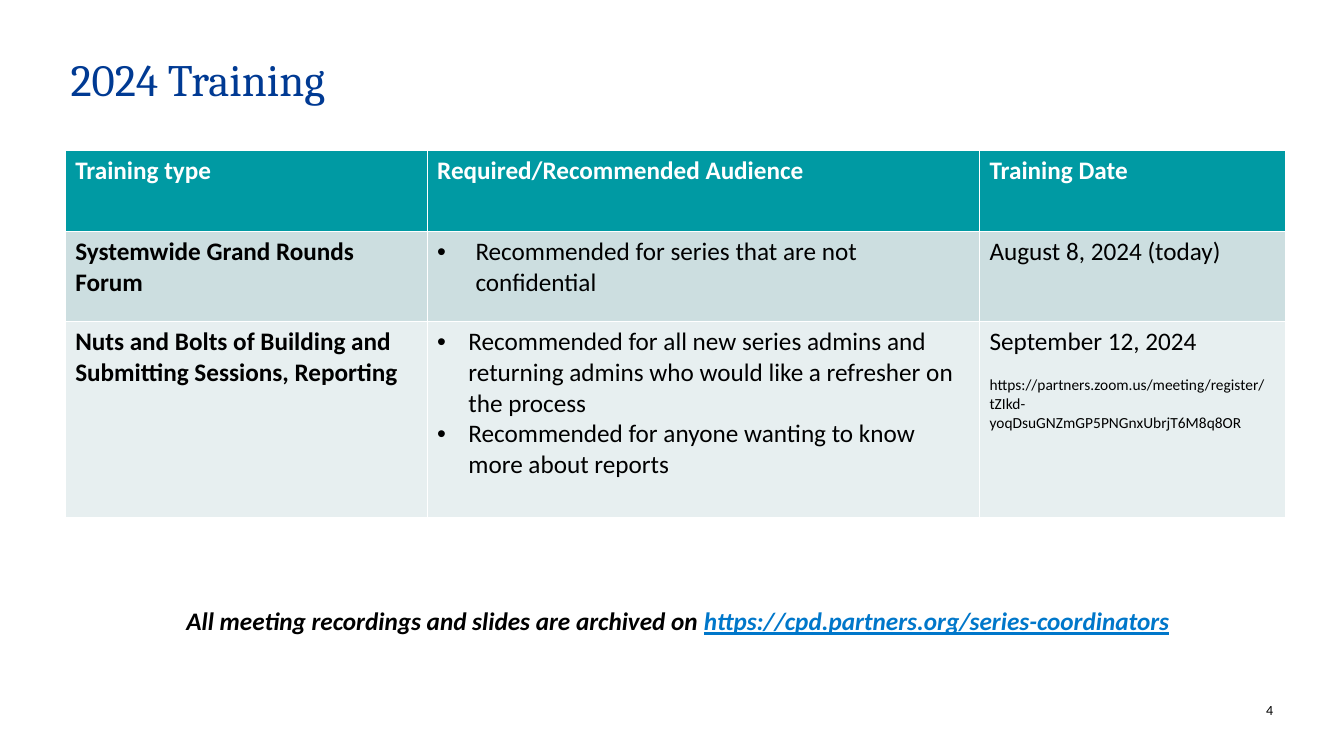
from dataclasses import dataclass

from lxml import etree
from pptx import Presentation
from pptx import util as u
from pptx.dml.color import RGBColor
from pptx.enum import text
from pptx.oxml.ns import qn


@dataclass(frozen=True)
class Theme:
    head: str = "Cambria"
    body: str = "Calibri"
    navy: str = "003A93"
    teal: str = "009AA3"
    blue: str = "0077CA"
    black: str = "000000"
    white: str = "FFFFFF"
    bands: tuple = ("CCDEE0", "E7EFF0")
    title: int = 32
    base: int = 18
    small: int = 11
    tiny: int = 10


class Deck:
    def __init__(self, theme):
        self.theme = theme
        self.prs = Presentation()
        self.prs.slide_width = u.Inches(13.33)
        self.prs.slide_height = u.Inches(7.5)
        self.slide = self.prs.slides.add_slide(self.prs.slide_layouts[6])

    def wide(self, share):
        return int(self.prs.slide_width * share / 100)

    def high(self, share):
        return int(self.prs.slide_height * share / 100)

    def rect(self, left, top, width, height):
        return self.wide(left), self.high(top), self.wide(width), self.high(height)

    def style(self, run, size, color, face=None, bold=False, italic=False, line=False):
        font = run.font
        font.name = face or self.theme.body
        font.size = u.Pt(size)
        font.color.rgb = RGBColor.from_string(color)
        font.bold = bold
        font.italic = italic
        font.underline = line

    def box(self, area, words, inset=True):
        frame = self.slide.shapes.add_textbox(*self.rect(*area)).text_frame
        frame.word_wrap = True
        if not inset:
            frame.margin_left = frame.margin_right = 0
            frame.margin_top = frame.margin_bottom = 0
        para = frame.paragraphs[0]
        for value, look in words:
            run = para.add_run()
            run.text = value
            self.style(run, **look)
        return para

    def bullet(self, para, indent):
        props = para._p.get_or_add_pPr()
        props.set("marL", str(u.Inches(indent)))
        props.set("indent", str(-u.Inches(indent)))
        etree.SubElement(props, qn("a:buFont")).set("typeface", "Arial")
        etree.SubElement(props, qn("a:buChar")).set("char", "•")

    def cell(self, cell, lines, fill, color, bold, indent=None):
        cell.fill.solid()
        cell.fill.fore_color.rgb = RGBColor.from_string(fill)
        cell.text_frame.text = "\n".join(lines)
        for para in cell.text_frame.paragraphs:
            if indent:
                self.bullet(para, indent)
            link = para.text.startswith("https:")
            if link:
                para.space_before = u.Pt(13.4)
            size = self.theme.small if link else self.theme.base
            self.style(para.runs[0], size, color, bold=bold)

    def table(self, left, top, cols, rows, data, indents):
        area = self.rect(left, top, sum(cols), sum(rows))
        table = self.slide.shapes.add_table(len(rows), len(cols), *area).table
        for col, share in zip(table.columns, cols):
            col.width = self.wide(share)
        for row, share in zip(table.rows, rows):
            row.height = self.high(share)
        t = self.theme
        for r, line in enumerate(data):
            fill = t.bands[(r - 1) % 2] if r else t.teal
            color = t.black if r else t.white
            for c, lines in enumerate(line):
                indent = indents[r] if c == 1 else None
                self.cell(table.cell(r, c), lines, fill, color, r == 0 or c == 0, indent)


def main():
    t = Theme()
    deck = Deck(t)
    look = dict(size=t.title, color=t.navy, face=t.head)
    title = deck.box((5.25, 7.6, 89.4, 14), [("2024 Training", look)], inset=False)
    title.line_spacing = 0.9

    data = [
        [["Training type"], ["Required/Recommended Audience"], ["Training Date"]],
        [
            ["Systemwide Grand Rounds Forum"],
            ["Recommended for series that are not confidential"],
            ["August 8, 2024 (today)"],
        ],
        [
            ["Nuts and Bolts of Building and Submitting Sessions, Reporting"],
            [
                "Recommended for all new series admins and returning admins "
                "who would like a refresher on the process",
                "Recommended for anyone wanting to know more about reports",
            ],
            [
                "September 12, 2024",
                "https://partners.zoom.us/meeting/register/"
                "tZIkd-yoqDsuGNZmGP5PNGnxUbrjT6M8q8OR",
            ],
        ],
    ]
    deck.table(4.85, 19.87, (26.93, 41.1, 22.8), (10.8, 11.87, 25.9), data, (None, 0.38, 0.31))

    note = dict(size=t.base, bold=True, italic=True)
    words = [
        ("All meeting recordings and slides are archived on ", dict(note, color=t.black)),
        ("https://cpd.partners.org/series-coordinators", dict(note, color=t.blue, line=True)),
    ]
    deck.box((13.13, 79.47, 75.53, 5.33), words)

    look = dict(size=t.tiny, color=t.black)
    page = deck.box((91.88, 92.8, 2.85, 2.27), [("4", look)], inset=False)
    page.alignment = text.PP_ALIGN.RIGHT
    deck.prs.save("out.pptx")


if __name__ == "__main__":
    main()
